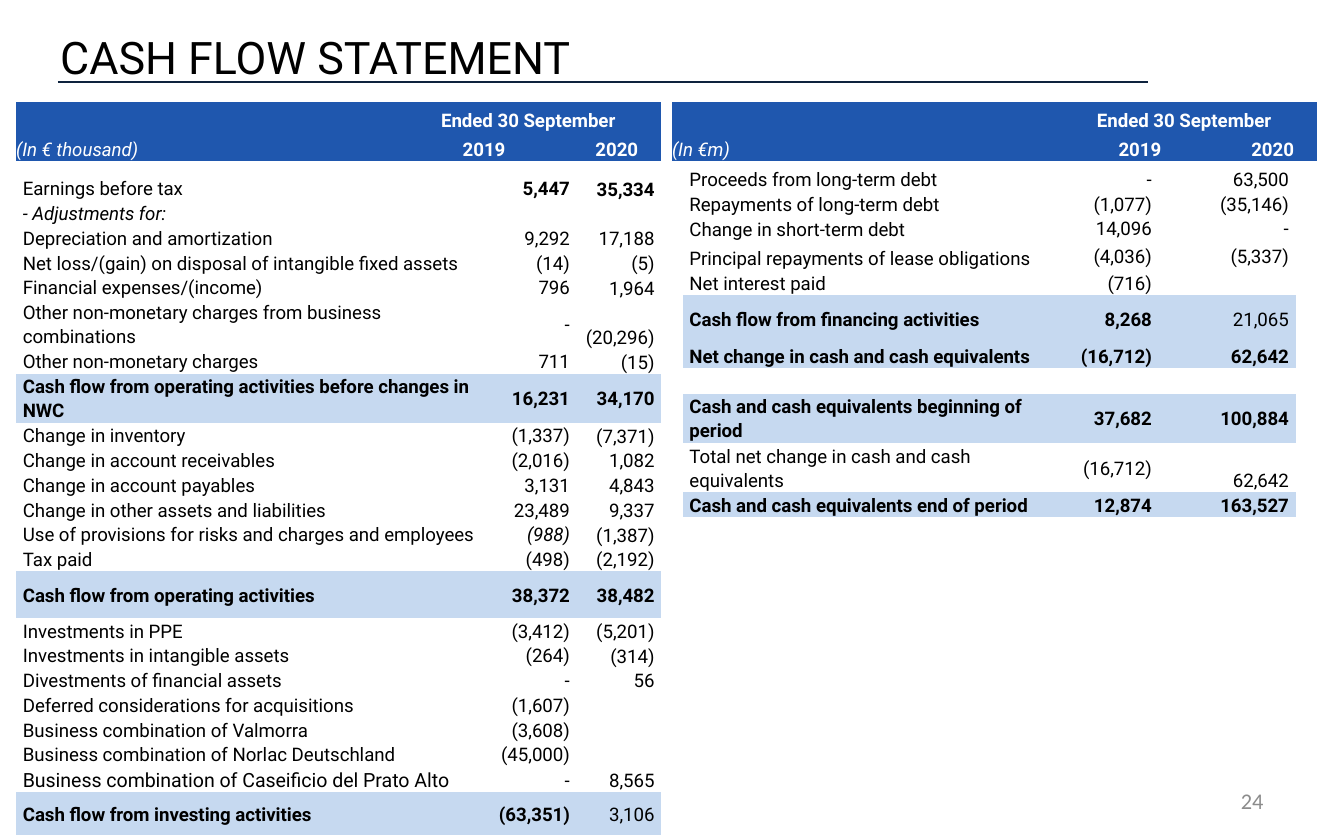
from dataclasses import dataclass
from typing import Any

from pptx import Presentation
from pptx import util as u
from pptx.dml.color import RGBColor
from pptx.enum import shapes, text
from pptx.oxml import ns, xmlchemy

PX = 9144
BLACK = RGBColor(0x00, 0x00, 0x00)
WHITE = RGBColor(0xFF, 0xFF, 0xFF)
BLUE = RGBColor(0x1F, 0x57, 0xAE)
PALE = RGBColor(0xC6, 0xD9, 0xF0)
NAVY = RGBColor(0x0E, 0x23, 0x3E)
GRAY = RGBColor(0x8C, 0x8C, 0x8C)
PLAIN_GRID = "{2D5ABB26-0587-4C30-8999-92F81FD0307C}"
LEFT, MID, RIGHT = text.PP_ALIGN.LEFT, text.PP_ALIGN.CENTER, text.PP_ALIGN.RIGHT
ANCHORS = {"m": text.MSO_ANCHOR.MIDDLE, "b": text.MSO_ANCHOR.BOTTOM}


@dataclass(frozen=True)
class Row:
    label: str
    old: str = ""
    new: str = ""
    marks: str = "---"
    high: int = 18
    size: float = 10
    anchors: str = ""


@dataclass(frozen=True)
class Grid:
    left: int
    top: int
    cols: list[int]
    anchors: str
    rows: list[Row]


@dataclass(frozen=True)
class Head:
    left: int
    unit: str


HEADS = [Head(12, "(In € thousand)"), Head(500, "(In €m)")]

GRIDS = [
    Grid(12, 131, [346, 71, 63], "mmb", [
        Row("Earnings before tax", "5,447", "35,334", "-bb"),
        Row("- Adjustments for:", marks="i--"),
        Row("Depreciation and amortization", "9,292", "17,188"),
        Row("Net loss/(gain) on disposal of intangible fixed assets", "(14)", "(5)"),
        Row("Financial expenses/(income)", "796", "1,964"),
        Row("Other non-monetary charges from business combinations", "-", "(20,296)"),
        Row("Other non-monetary charges", "711", "(15)"),
        Row("Cash flow from operating activities before changes in NWC",
            "16,231", "34,170", "bbb", 35, anchors="mmm"),
        Row("Change in inventory", "(1,337)", "(7,371)"),
        Row("Change in account receivables", "(2,016)", "1,082"),
        Row("Change in account payables", "3,131", "4,843"),
        Row("Change in other assets and liabilities", "23,489", "9,337"),
        Row("Use of provisions for risks and charges and employees",
            "(988)", "(1,387)", "-i-"),
        Row("Tax paid", "(498)", "(2,192)"),
        Row("Cash flow from operating activities",
            "38,372", "38,482", "bbb", 35, anchors="mmm"),
        Row("Investments in PPE", "(3,412)", "(5,201)"),
        Row("Investments in intangible assets", "(264)", "(314)"),
        Row("Divestments of financial assets", "-", "56"),
        Row("Deferred considerations for acquisitions", "(1,607)"),
        Row("Business combination of Valmorra", "(3,608)"),
        Row("Business combination of Norlac Deutschland", "(45,000)"),
        Row("Business combination of Caseificio del Prato Alto", "-", "8,565", size=10.5),
        Row("Cash flow from investing activities",
            "(63,351)", "3,106", "bb-", 32, anchors="mmm"),
    ]),
    Grid(508, 124, [283, 71, 102], "bmm", [
        Row("Proceeds from long-term debt", "-", "63,500"),
        Row("Repayments of long-term debt", "(1,077)", "(35,146)"),
        Row("Change in short-term debt", "14,096", "-"),
        Row("Principal repayments of lease obligations", "(4,036)", "(5,337)", high=22),
        Row("Net interest paid", "(716)"),
        Row("Cash flow from financing activities",
            "8,268", "21,065", "bb-", 36, anchors="mmm"),
        Row("Net change in cash and cash equivalents", "(16,712)", "62,642", "bbb"),
        Row("", high=19),
        Row("Cash and cash equivalents beginning of period",
            "37,682", "100,884", "bbb", anchors="mmm"),
        Row("Total net change in cash and cash equivalents",
            "(16,712)", "62,642", anchors="bmb"),
        Row("Cash and cash equivalents end of period", "12,874", "163,527", "bbb"),
    ]),
]


def style(para: Any, words: str, size: float, color: RGBColor,
          face: str = "Roboto", mark: str = "-") -> None:
    para.text = words
    font = para.font
    font.name, font.size, font.color.rgb = face, u.Pt(size), color
    font.bold, font.italic = mark == "b", mark == "i"


def label(slide: Any, box: tuple[int, ...], words: str, size: float,
          color: RGBColor, face: str, align: Any) -> None:
    frame = slide.shapes.add_textbox(*(n * PX for n in box)).text_frame
    frame.word_wrap = True
    frame.vertical_anchor = text.MSO_ANCHOR.MIDDLE
    para = frame.paragraphs[0]
    para.alignment = align
    style(para, words, size, color, face)


def table(slide: Any, left: int, top: int, cols: list[int], highs: list[int]) -> Any:
    frame = slide.shapes.add_table(len(highs), len(cols), left * PX, top * PX,
                                   sum(cols) * PX, sum(highs) * PX)
    grid = frame.table
    grid.first_row = grid.horz_banding = False
    next(frame.element.iter(ns.qn("a:tableStyleId"))).text = PLAIN_GRID
    for col, wide in zip(grid.columns, cols):
        col.width = wide * PX
    for row, high in zip(grid.rows, highs):
        row.height = high * PX
    return grid


def fill(cell: Any, words: str, mark: str, color: RGBColor, back: RGBColor,
         align: Any, anchor: str, pad: int = 0, size: float = 10) -> Any:
    cell.fill.solid()
    cell.fill.fore_color.rgb = back
    cell.margin_left = cell.margin_right = pad * PX
    cell.margin_top = cell.margin_bottom = 0
    cell.vertical_anchor = ANCHORS[anchor]
    para = cell.text_frame.paragraphs[0]
    para.alignment = align
    style(para, words, size, color, mark=mark)
    return para


def draw_head(slide: Any, head: Head) -> None:
    grid = table(slide, head.left, 76, [178, 54, 132, 116], [22, 22])
    grid.cell(0, 0).merge(grid.cell(1, 0))
    grid.cell(0, 2).merge(grid.cell(0, 3))
    cells = [
        [(head.unit, "i", LEFT, 0), ("", "-", LEFT, 0),
         ("Ended 30 September", "b", MID, 1), ("", "-", LEFT, 0)],
        [("", "-", LEFT, 0), ("", "-", LEFT, 0),
         ("2019", "b", RIGHT, 0), ("2020", "b", MID, 1)],
    ]
    for r, line in enumerate(cells):
        for c, (words, mark, align, level) in enumerate(line):
            para = fill(grid.cell(r, c), words, mark, WHITE, BLUE, align, "b")
            para.level = level


def draw_grid(slide: Any, spec: Grid) -> None:
    grid = table(slide, spec.left, spec.top, spec.cols, [row.high for row in spec.rows])
    for r, row in enumerate(spec.rows):
        back = PALE if row.marks[0] == "b" else WHITE
        anchors = row.anchors or spec.anchors
        for c, words in enumerate((row.label, row.old, row.new)):
            para = fill(grid.cell(r, c), words, row.marks[c], BLACK, back,
                        RIGHT if c else LEFT, anchors[c], 5, 10 if c else row.size)
            para.line_spacing = 1.1


def main() -> None:
    deck = Presentation()
    deck.slide_width, deck.slide_height = 1000 * PX, 625 * PX
    slide = deck.slides.add_slide(deck.slide_layouts[6])
    label(slide, (717, 579, 233, 33), "24", 12, GRAY, "Calibri", RIGHT)
    label(slide, (35, 0, 900, 84), "CASH FLOW STATEMENT", 24, BLACK, "Roboto", LEFT)
    rule = slide.shapes.add_connector(shapes.MSO_CONNECTOR.STRAIGHT,
                                      43 * PX, 61 * PX, 854 * PX, 61 * PX)
    rule.line.color.rgb, rule.line.width = NAVY, u.Pt(0.75)
    props = rule.element.spPr
    props.append(xmlchemy.OxmlElement("a:effectLst"))
    for head in HEADS:
        draw_head(slide, head)
    for grid in GRIDS:
        draw_grid(slide, grid)
    deck.save("out.pptx")


if __name__ == "__main__":
    main()
